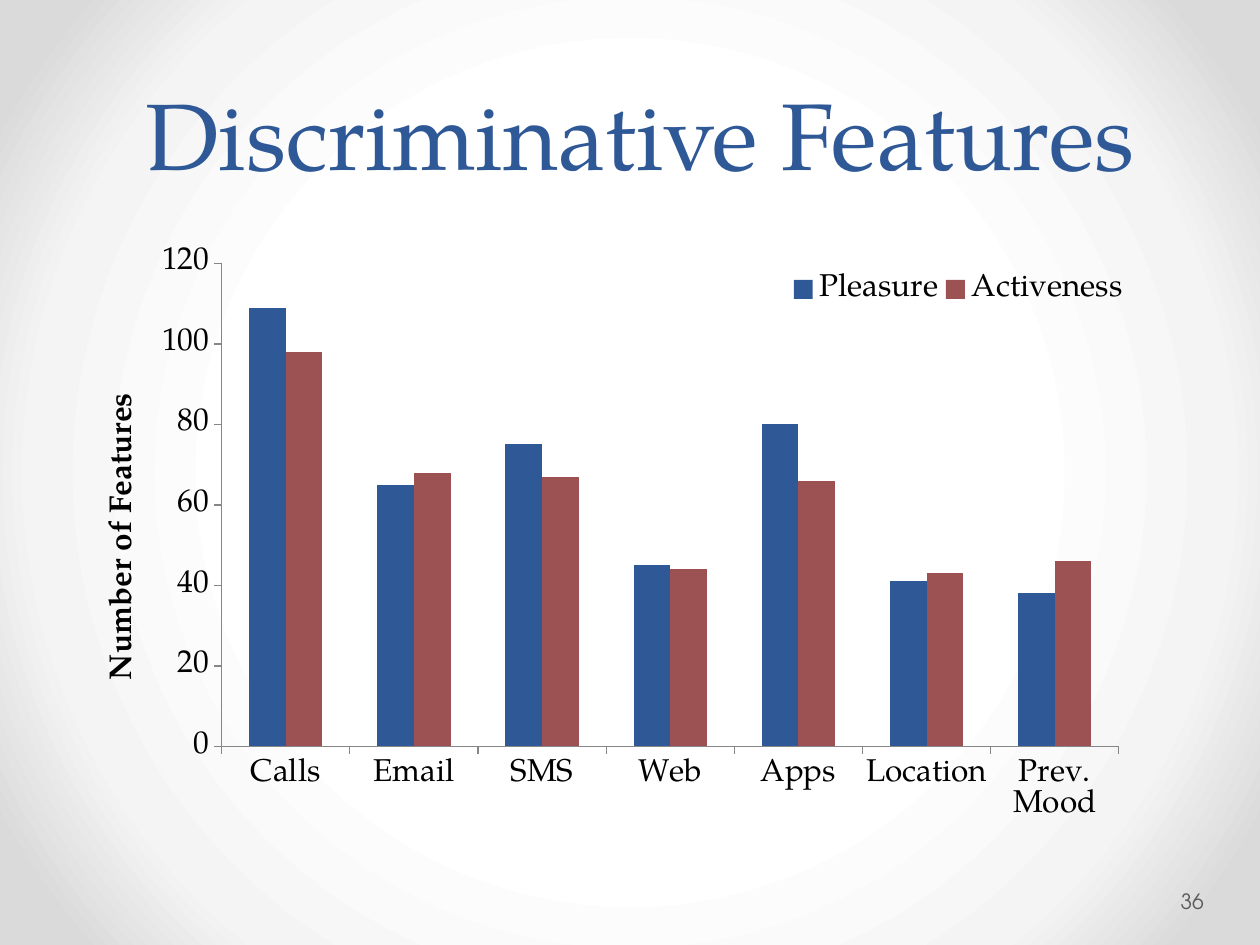
import pptx
import pptx.chart.data
import pptx.dml.color
import pptx.enum.chart
import pptx.enum.text
import pptx.oxml
import pptx.oxml.ns
import pptx.util
from pptx.util import Cm

COLORS = {"blue": "2F5897", "red": "9C5252", "black": "000000",
          "grey": "595959", "axis": "868686"}
SERIF, SANS = "TeX Gyre Pagella", "TeX Gyre Adventor"
RGB = pptx.dml.color.RGBColor.from_string
Pt = pptx.util.Pt


def write(tf, text, size, font, color, bold=False, align=None, anchor=None, spacing=None):
    """Put one formatted run of text into a text frame."""
    p = tf.paragraphs[0]
    if align is not None:
        p.alignment = align
    if spacing:
        p.line_spacing = Pt(spacing)
    if anchor is not None:
        tf.vertical_anchor = anchor
    r = p.add_run()
    r.text = text
    r.font.size, r.font.name, r.font.bold = Pt(size), font, bold
    r.font.color.rgb = RGB(COLORS[color])


def place(parent, index, inner=False, **box):
    """Give a chart part a manual layout, in fractions of the chart."""
    for old in parent.findall(pptx.oxml.ns.qn("c:layout")):
        parent.remove(old)
    target = '<c:layoutTarget val="inner"/>' if inner else ""
    modes = '<c:xMode val="edge"/><c:yMode val="edge"/>'
    values = "".join(f'<c:{k} val="{v}"/>' for k, v in box.items())
    parent.insert(index, pptx.oxml.parse_xml(
        f'<c:layout {pptx.oxml.ns.nsdecls("c")}><c:manualLayout>'
        f'{target}{modes}{values}</c:manualLayout></c:layout>'))


prs = pptx.Presentation()
prs.slide_width, prs.slide_height = Cm(25.4), Cm(19.05)
s = prs.slides.add_slide(prs.slide_layouts[5])

# Background: white centre fading to grey corners
s.background.fill.gradient()
grad = s.background._cSld.find(".//" + pptx.oxml.ns.qn("a:gradFill"))
stops = "".join(f'<a:gs pos="{pos}000"><a:srgbClr val="{c}"/></a:gs>'
                for pos, c in [(50, "FFFFFF"), (76, "F4F4F4"), (92, "DADADA")])
grad.getparent().replace(grad, pptx.oxml.parse_xml(
    f'<a:gradFill {pptx.oxml.ns.nsdecls("a")} rotWithShape="1"><a:gsLst>{stops}</a:gsLst>'
    '<a:path path="circle"><a:fillToRect l="50000" t="50000" r="50000" b="50000"/></a:path>'
    '</a:gradFill>'))

# Title
sp = s.shapes.title
sp.left, sp.top, sp.width, sp.height = Cm(1.24), Cm(0.76), Cm(22.86), Cm(3.18)
write(sp.text_frame, " Discriminative Features", 54, SERIF, "blue", spacing=58,
      align=pptx.enum.text.PP_ALIGN.CENTER, anchor=pptx.enum.text.MSO_ANCHOR.BOTTOM)

# Slide number
tf = s.shapes.add_textbox(Cm(23.72), Cm(17.65), Cm(1.55), Cm(1.02)).text_frame
tf.word_wrap = True
tf.margin_left, tf.margin_right = Cm(0.08), Cm(0.13)
write(tf, "36", 12, SANS, "grey", anchor=pptx.enum.text.MSO_ANCHOR.MIDDLE)

# Chart
data = pptx.chart.data.CategoryChartData()
data.categories = ["Calls", "Email", "SMS", "Web", "Apps", "Location", "Prev. Mood"]
data.add_series("Pleasure", [109, 65, 75, 45, 80, 41, 38])
data.add_series("Activeness", [98, 68, 67, 44, 66, 43, 46])
chart = s.shapes.add_chart(pptx.enum.chart.XL_CHART_TYPE.COLUMN_CLUSTERED,
                           Cm(1.12), Cm(4.52), Cm(22.33), Cm(13.16), data).chart
chart.has_title = False
chart.font.size, chart.font.name = Pt(18), SERIF
chart.font.color.rgb = RGB(COLORS["black"])
plot = chart.plots[0]
plot.gap_width, plot.overlap, plot.vary_by_categories = 150, 0, False
for series, color in zip(plot.series, ["blue", "red"]):
    series.format.fill.solid()
    series.format.fill.fore_color.rgb = RGB(COLORS[color])
place(chart._chartSpace.chart.plotArea, 0, inner=True, x=0.15, y=0.06, w=0.81, h=0.74)

# Axes
for axis in (chart.category_axis, chart.value_axis):
    axis.has_major_gridlines = False
    axis.major_tick_mark = pptx.enum.chart.XL_TICK_MARK.OUTSIDE
    axis.minor_tick_mark = pptx.enum.chart.XL_TICK_MARK.NONE
    axis.format.line.color.rgb = RGB(COLORS["axis"])
    axis.format.line.width = Pt(0.75)
axis = chart.value_axis
axis.minimum_scale, axis.maximum_scale, axis.major_unit = 0, 120, 20
write(axis.axis_title.text_frame, "Number of Features", 18, SERIF, "black", bold=True)
bodyPr = axis.axis_title.text_frame._txBody.bodyPr
bodyPr.set("rot", "-5400000")
bodyPr.set("vert", "horz")
place(axis.axis_title._element, 1, x=0.04, y=0.25)

# Legend
chart.has_legend = True
chart.legend.position = pptx.enum.chart.XL_LEGEND_POSITION.RIGHT
chart.legend.include_in_layout = False
place(chart.legend._element, 1, x=0.66, y=0.06, w=0.31, h=0.08)

prs.save("out.pptx")
